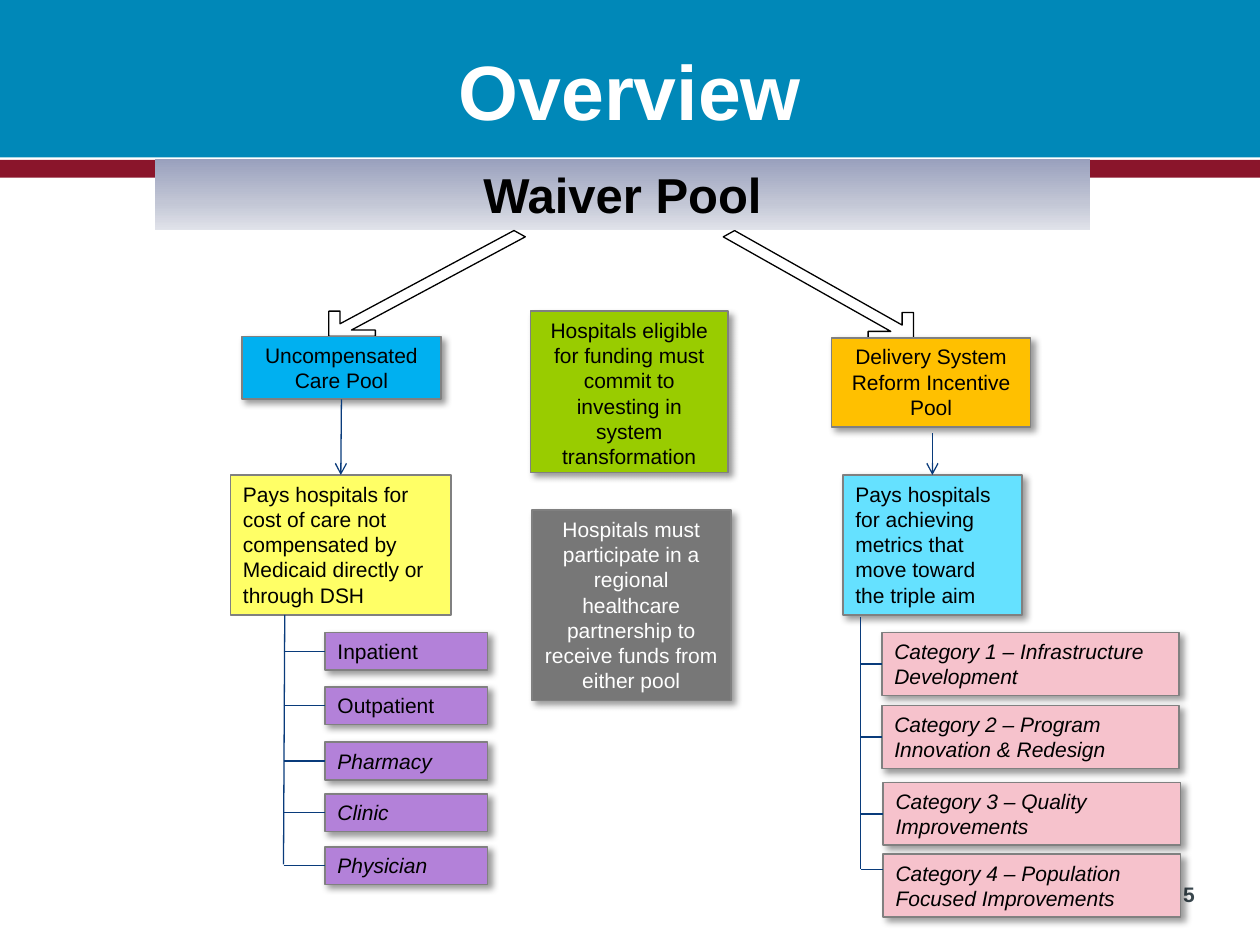
from copy import deepcopy
from dataclasses import dataclass

from lxml import etree
from pptx import Presentation
from pptx.dml.color import RGBColor
from pptx.enum.shapes import MSO_CONNECTOR, MSO_SHAPE
from pptx.enum.text import MSO_ANCHOR, PP_ALIGN
from pptx.oxml.ns import qn
from pptx.util import Inches, Pt

RECT = MSO_SHAPE.RECTANGLE
LINE = MSO_CONNECTOR.STRAIGHT
LEFT, MID, RIGHT = PP_ALIGN.LEFT, PP_ALIGN.CENTER, PP_ALIGN.RIGHT
TOP, CENTER = MSO_ANCHOR.TOP, MSO_ANCHOR.MIDDLE
SIDE_TOP, SIDE_LEFT, SIDE_BOTTOM = 0, 1, 2


@dataclass(frozen=True)
class Theme:
    font: str = "Arial"
    title: int = 44
    head: int = 28
    body: int = 12
    blue: str = "0088B8"
    red: str = "8A152B"
    black: str = "000000"
    white: str = "FFFFFF"
    slate: str = "3A484F"
    edge: str = "808080"
    link: str = "093B7B"
    sky: str = "00B0F0"
    gold: str = "FFC000"
    green: str = "99CC00"
    gray: str = "777777"
    yellow: str = "FFFF66"
    aqua: str = "65E1FF"
    violet: str = "B381D9"
    pink: str = "F6C2CC"
    fade: tuple = ((0, "99A0BD"), (0.61, "C2C6D5"), (1, "E1E3EA"))


@dataclass(frozen=True)
class Box:
    text: str
    x: float
    y: float
    w: float
    h: float
    fill: str
    align: int = MID
    color: str = Theme.black
    italic: bool = False
    shade: bool = True


T = Theme()


def rgb(code: str) -> RGBColor:
    return RGBColor.from_string(code)


def write(shape, text: str, size: int, color: str, align=MID,
          bold=False, italic=False, anchor=TOP) -> None:
    frame = shape.text_frame
    frame.word_wrap = True
    frame.vertical_anchor = anchor
    frame.text = text
    para = frame.paragraphs[0]
    para.alignment = align
    font = para.runs[0].font
    font.name, font.size = T.font, Pt(size)
    font.bold, font.italic = bold, italic
    font.color.rgb = rgb(color)


def add_rect(slide, x: float, y: float, w: float, h: float, fill: str):
    shape = slide.shapes.add_shape(RECT, Inches(x), Inches(y), Inches(w), Inches(h))
    shape.shadow.inherit = False
    shape.fill.solid()
    shape.fill.fore_color.rgb = rgb(fill)
    shape.line.fill.background()
    return shape


def add_shade(shape) -> None:
    effects = shape.element.spPr.find(qn("a:effectLst"))
    shade = etree.SubElement(effects, qn("a:outerShdw"), blurRad=str(Pt(4)),
                             dist=str(Pt(3)), dir="2700000", algn="tl", rotWithShape="0")
    tone = etree.SubElement(shade, qn("a:srgbClr"), val=T.black)
    etree.SubElement(tone, qn("a:alpha"), val="40000")


def add_box(slide, box: Box):
    shape = add_rect(slide, box.x, box.y, box.w, box.h, box.fill)
    shape.line.color.rgb = rgb(T.edge)
    shape.line.width = Pt(1)
    if box.shade:
        add_shade(shape)
    write(shape, box.text, T.body, box.color, box.align, italic=box.italic)
    return shape


def add_line(slide, x1: float, y1: float, x2: float, y2: float, arrow=False):
    line = slide.shapes.add_connector(LINE, Inches(x1), Inches(y1), Inches(x2), Inches(y2))
    line.line.color.rgb = rgb(T.link)
    line.line.width = Pt(0.75)
    props = line.element.spPr
    if arrow:
        etree.SubElement(props.find(qn("a:ln")), qn("a:tailEnd"), type="arrow")
    etree.SubElement(props, qn("a:effectLst"))
    return line


def add_arrow(slide, points: list) -> None:
    spots = [(Inches(x), Inches(y)) for x, y in points]
    path = slide.shapes.build_freeform(*spots[0])
    path.add_line_segments(spots[1:], close=True)
    shape = path.convert_to_shape()
    shape.shadow.inherit = False
    shape.fill.background()
    shape.line.color.rgb = rgb(T.black)
    shape.line.width = Pt(0)


def add_branch(slide, stem: float, box: Box) -> None:
    shape = add_box(slide, box)
    y = box.y + box.h / 2
    add_line(slide, stem, y, box.x, y).end_connect(shape, SIDE_LEFT)


def main() -> None:
    deck = Presentation()
    deck.slide_width, deck.slide_height = Inches(10), Inches(7.5)
    slide = deck.slides.add_slide(deck.slide_layouts[5])

    # Bands, with the title in front of them
    add_rect(slide, 0, 0, 10, 1.25, T.blue)
    add_rect(slide, 0, 1.27, 10, 0.14, T.red)
    title = slide.shapes.title
    title.element.getparent().append(title.element)
    title.left, title.top = Inches(0.5), Inches(0.25)
    title.width, title.height = Inches(9), Inches(0.92)
    write(title, "Overview", T.title, T.white, bold=True, anchor=CENTER)

    # Page number
    page = slide.shapes.add_textbox(0, Inches(6.95), Inches(9.58), Inches(0.55))
    write(page, "5", T.body, T.slate, RIGHT, bold=True)

    # Waiver pool bar
    bar = add_rect(slide, 1.23, 1.26, 7.42, 0.57, T.white)
    bar.fill.gradient()
    bar.fill.gradient_angle = 270
    first = bar.element.spPr.find(".//" + qn("a:gs"))
    first.addnext(deepcopy(first))
    for stop, (place, tone) in zip(bar.fill.gradient_stops, T.fade):
        stop.position = place
        stop.color.rgb = rgb(tone)
    write(bar, "Waiver Pool", T.head, T.black, bold=True)

    # Block arrows to the two pools
    add_arrow(slide, [(2.61, 2.67), (2.98, 2.67), (2.98, 2.62), (2.79, 2.62), (4.17, 1.88),
                      (4.08, 1.83), (2.7, 2.57), (2.7, 2.47), (2.61, 2.47)])
    add_arrow(slide, [(7.25, 2.68), (7.25, 2.48), (7.16, 2.48), (7.16, 2.58), (5.83, 1.83),
                      (5.74, 1.88), (7.07, 2.63), (6.89, 2.63), (6.89, 2.68)])

    # Conditions in the middle
    add_box(slide, Box("Hospitals eligible for funding must commit to investing in system "
                       "transformation", 4.21, 2.47, 1.57, 1.28, T.green))
    add_box(slide, Box("Hospitals must participate in a regional healthcare partnership to "
                       "receive funds from either pool", 4.22, 4.05, 1.58, 1.51, T.gray,
                       color=T.white))

    # Pools and what they pay for
    care = add_box(slide, Box("Uncompensated Care Pool", 1.92, 2.67, 1.58, 0.5, T.sky))
    add_box(slide, Box("Delivery System Reform Incentive Pool", 6.6, 2.68, 1.58, 0.71, T.gold))
    cost = add_box(slide, Box("Pays hospitals for cost of care not compensated by Medicaid "
                              "directly or through DSH", 1.83, 3.77, 1.75, 1.11, T.yellow,
                              LEFT, shade=False))
    aim = add_box(slide, Box("Pays hospitals for achieving metrics that move toward the "
                             "triple aim", 6.69, 3.77, 1.42, 1.11, T.aqua, LEFT))
    drop = add_line(slide, 2.71, 3.17, 2.7, 3.77, arrow=True)
    drop.begin_connect(care, SIDE_BOTTOM)
    drop.end_connect(cost, SIDE_TOP)
    add_line(slide, 7.4, 3.44, 7.4, 3.77, arrow=True).end_connect(aim, SIDE_TOP)

    # Kinds of care
    add_line(slide, 2.26, 4.88, 2.25, 6.86)
    for name, y, slant in (("Inpatient", 5.02, False), ("Outpatient", 5.45, False),
                           ("Pharmacy", 5.89, True), ("Clinic", 6.3, True),
                           ("Physician", 6.72, True)):
        add_branch(slide, 2.25, Box(name, 2.58, y, 1.29, 0.3, T.violet, LEFT, italic=slant))

    # Categories; the last branch meets its box above the middle
    add_line(slide, 6.83, 4.9, 6.83, 6.9)
    for name, x, y in (("Category 1 – Infrastructure Development", 7, 5.02),
                       ("Category 2 – Program Innovation & Redesign", 7, 5.6),
                       ("Category 3 – Quality Improvements", 7.01, 6.21)):
        add_branch(slide, 6.83, Box(name, x, y, 2.36, 0.5, T.pink, LEFT, italic=True))
    add_box(slide, Box("Category 4 – Population Focused Improvements", 7.01, 6.78, 2.36, 0.5,
                       T.pink, LEFT, italic=True))
    add_line(slide, 6.83, 6.9, 7.01, 6.9)

    deck.save("out.pptx")


if __name__ == "__main__":
    main()
